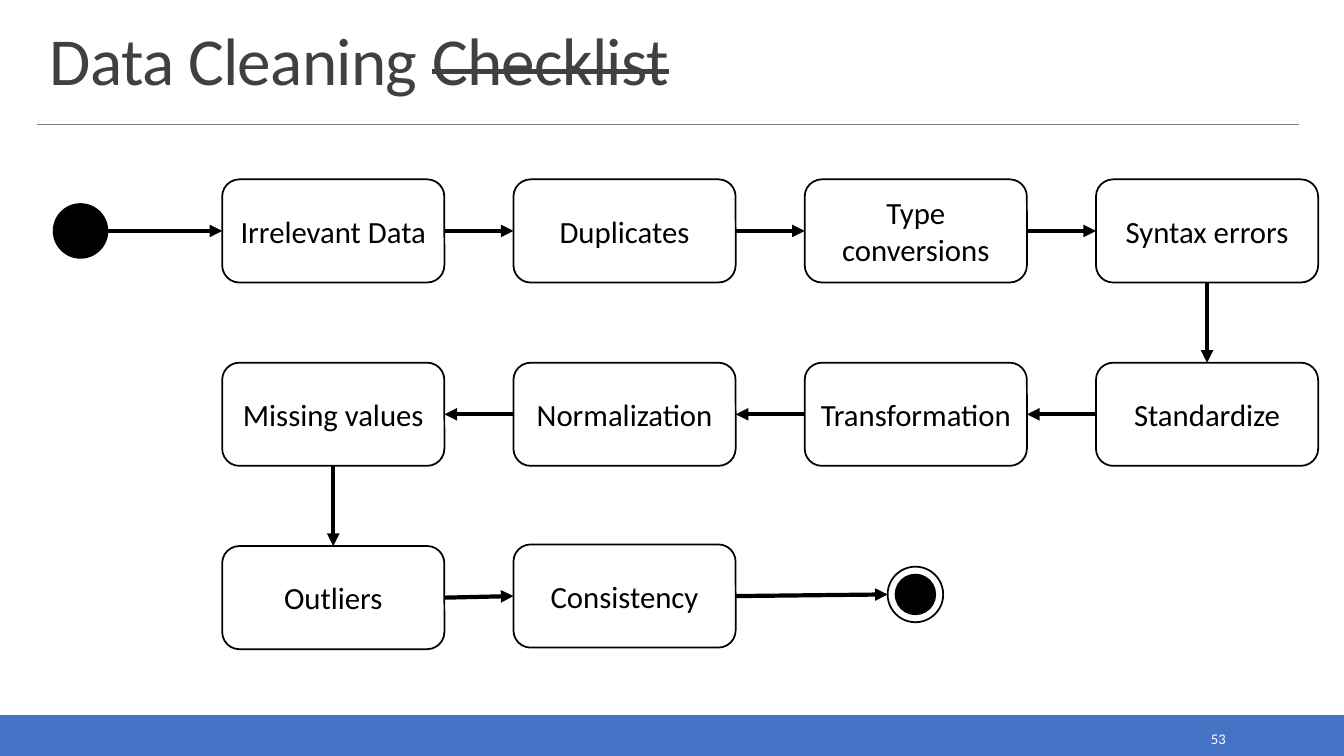
"""Build the data cleaning flowchart slide."""
from lxml import etree
from pptx import Presentation
from pptx.dml.color import RGBColor
from pptx.enum.shapes import MSO_CONNECTOR, MSO_SHAPE
from pptx.enum.text import MSO_ANCHOR, MSO_AUTO_SIZE, PP_ALIGN
from pptx.oxml.ns import qn
from pptx.util import Cm, Pt

STRAIGHT = MSO_CONNECTOR.STRAIGHT
RECTANGLE, ROUNDED, OVAL = MSO_SHAPE.RECTANGLE, MSO_SHAPE.ROUNDED_RECTANGLE, MSO_SHAPE.OVAL
MIDDLE, BOTTOM = MSO_ANCHOR.MIDDLE, MSO_ANCHOR.BOTTOM
LEFT, CENTER, RIGHT = PP_ALIGN.LEFT, PP_ALIGN.CENTER, PP_ALIGN.RIGHT
NO_AUTOFIT = MSO_AUTO_SIZE.NONE

BLACK = RGBColor(0x00, 0x00, 0x00)
WHITE = RGBColor(0xFF, 0xFF, 0xFF)
BLUE = RGBColor(0x44, 0x72, 0xC4)
GRAY = RGBColor(0x80, 0x80, 0x80)
DARK_GRAY = RGBColor(0x40, 0x40, 0x40)
FONT = "Calibri"

BOX_WIDTH, BOX_HEIGHT = 5.6, 2.6
FIRST_COLUMN, COLUMN_STEP = 5.6, 7.34
ROW_TOPS = [4.52, 9.14, 13.76]
CIRCLE_SIZE, DOT_SIZE = 1.4, 1.0
TOP_SITE, LEFT_SITE, BOTTOM_SITE, RIGHT_SITE = range(4)

STEPS = [
    ("Irrelevant Data", 0, ROW_TOPS[0]),
    ("Duplicates", 1, ROW_TOPS[0]),
    ("Type conversions", 2, ROW_TOPS[0]),
    ("Syntax errors", 3, ROW_TOPS[0]),
    ("Standardize", 3, ROW_TOPS[1]),
    ("Transformation", 2, ROW_TOPS[1]),
    ("Normalization", 1, ROW_TOPS[1]),
    ("Missing values", 0, ROW_TOPS[1]),
    ("Outliers", 0, ROW_TOPS[2]),
    ("Consistency", 1, ROW_TOPS[2] - 0.04),
]

presentation = Presentation()
presentation.slide_width, presentation.slide_height = Cm(33.87), Cm(19.05)
slide = presentation.slides.add_slide(presentation.slide_layouts[5])


def add_shape(kind, left, top, width, height, fill, line):
    shape = slide.shapes.add_shape(kind, Cm(left), Cm(top), Cm(width), Cm(height))
    shape.shadow.inherit = False
    if fill is None:
        shape.fill.background()
    else:
        shape.fill.solid()
        shape.fill.fore_color.rgb = fill
    if line is None:
        shape.line.fill.background()
    else:
        shape.line.color.rgb = line
        shape.line.width = Pt(1.25)
    return shape


def add_line(start, end, color, width, arrow=True):
    connector = slide.shapes.add_connector(STRAIGHT, *start, *end)
    connector.line.color.rgb = color
    connector.line.width = Pt(width)
    if arrow:
        line_xml = connector.line._get_or_add_ln()
        etree.SubElement(line_xml, qn("a:tailEnd"), type="triangle")
    etree.SubElement(connector._element.spPr, qn("a:effectLst"))
    return connector


add_shape(RECTANGLE, 0, 18.03, 33.87, 1.02, BLUE, BLUE)
add_line((Cm(0.94), Cm(3.13)), (Cm(32.74), Cm(3.13)), GRAY, 0.5, arrow=False)

title = slide.shapes.title
title.left, title.top, title.width, title.height = Cm(1), Cm(0.5), Cm(31.8), Cm(2.14)
title.text_frame.auto_size = NO_AUTOFIT
title.text_frame.vertical_anchor = BOTTOM
paragraph = title.text_frame.paragraphs[0]
paragraph.alignment = LEFT
paragraph.line_spacing = 0.85
paragraph.font.name = FONT
paragraph.font.size = Pt(48)
paragraph.font.color.rgb = DARK_GRAY
for text, strike in [("Data Cleaning ", "noStrike"), ("Checklist", "sngStrike")]:
    run = paragraph.add_run()
    run.text = text
    run_properties = run._r.get_or_add_rPr()
    run_properties.set("strike", strike)
    run_properties.set("spc", "-50")

page_number = slide.shapes.add_textbox(Cm(27.5), Cm(18.26), Cm(3.64), Cm(0.72))
page_number.text_frame.word_wrap = True
page_number.text_frame.vertical_anchor = MIDDLE
paragraph = page_number.text_frame.paragraphs[0]
paragraph.text = "53"
paragraph.alignment = RIGHT
paragraph.font.name = FONT
paragraph.font.size = Pt(10.5)
paragraph.font.color.rgb = WHITE

start_circle = add_shape(OVAL, 1.33, 5.12, CIRCLE_SIZE, CIRCLE_SIZE, BLACK, None)
end_circle = add_shape(OVAL, 22.37, 14.28, CIRCLE_SIZE, CIRCLE_SIZE, None, BLACK)
inset = (CIRCLE_SIZE - DOT_SIZE) / 2
add_shape(OVAL, 22.37 + inset, 14.28 + inset, DOT_SIZE, DOT_SIZE, BLACK, BLACK)

boxes = []
for label, column, top in STEPS:
    left = FIRST_COLUMN + column * COLUMN_STEP
    box = add_shape(ROUNDED, left, top, BOX_WIDTH, BOX_HEIGHT, None, BLACK)
    box.text_frame.word_wrap = True
    box.text_frame.vertical_anchor = MIDDLE
    paragraph = box.text_frame.paragraphs[0]
    paragraph.text = label
    paragraph.alignment = CENTER
    paragraph.font.name = FONT
    paragraph.font.size = Pt(22)
    paragraph.font.color.rgb = BLACK
    boxes.append(box)

for source, target in zip(boxes, boxes[1:]):
    if source.left == target.left:
        sites = BOTTOM_SITE, TOP_SITE
    elif source.left < target.left:
        sites = RIGHT_SITE, LEFT_SITE
    else:
        sites = LEFT_SITE, RIGHT_SITE
    arrow = add_line((0, 0), (0, 0), BLACK, 3)
    arrow.begin_connect(source, sites[0])
    arrow.end_connect(target, sites[1])

start_point = start_circle.left + start_circle.width, start_circle.top + start_circle.height // 2
end_point = end_circle.left, end_circle.top + end_circle.height // 2
first_arrow = add_line(start_point, start_point, BLACK, 3)
first_arrow.end_connect(boxes[0], LEFT_SITE)
last_arrow = add_line(end_point, end_point, BLACK, 3)
last_arrow.begin_connect(boxes[-1], RIGHT_SITE)

presentation.save("out.pptx")
